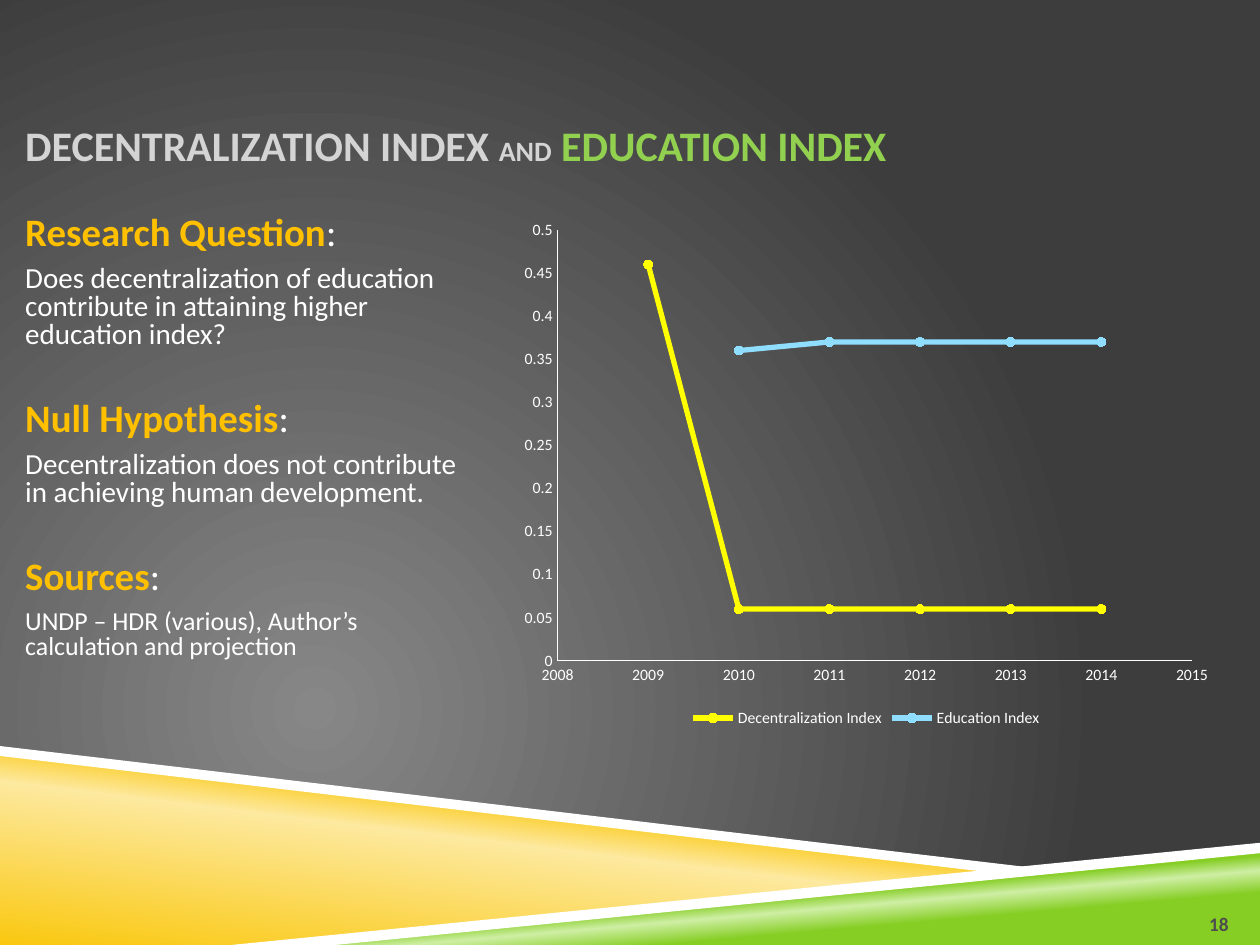
from lxml import etree
from pptx import Presentation
from pptx import util as u
from pptx.chart.data import XyChartData
from pptx.dml.color import RGBColor
from pptx.enum import chart as ch
from pptx.enum import text
from pptx.oxml.ns import qn

FONT = "Calibri"
WHITE, GOLD, YELLOW, GREEN, SKY = "FFFFFF", "FFC000", "FFFF00", "86CE24", "8FDEFF"
LIGHT_GREY, LIME = "D4D4D4", "92D050"

SECTIONS = [
    ("Research Question", 16.6,
     "Does decentralization of education contribute in attaining higher education index?"),
    ("Null Hypothesis", 16.6,
     "Decentralization does not contribute in achieving human development."),
    ("Sources", 14.8, "UNDP – HDR (various), Author’s calculation and projection"),
]
YEARS = [2014, 2013, 2012, 2011, 2010, 2009]
SERIES = [
    ("Decentralization Index", YELLOW, [0.06, 0.06, 0.06, 0.06, 0.06, 0.46]),
    ("Education Index", SKY, [0.37, 0.37, 0.37, 0.37, 0.36]),
]


def rgb(value):
    return RGBColor.from_string(value)


def set_gradient(fill, stops, angle=None, center=None):
    """Fill with (percent, colour) stops, linear by angle or circular around a rectangle."""
    fill.gradient()
    grad = fill._xPr.find(qn("a:gradFill"))
    for child in list(grad):
        grad.remove(child)
    gs_list = etree.SubElement(grad, qn("a:gsLst"))
    for percent, color in stops:
        gs = etree.SubElement(gs_list, qn("a:gs"), pos=str(percent * 1000))
        etree.SubElement(gs, qn("a:srgbClr"), val=color)
    if center:
        circle = etree.SubElement(grad, qn("a:path"), path="circle")
        etree.SubElement(circle, qn("a:fillToRect"),
                         {side: str(v * 1000) for side, v in zip("ltrb", center)})
    else:
        etree.SubElement(grad, qn("a:lin"), ang=str(angle * 60000), scaled="0")


def add_polygon(slide, points):
    start, *rest = [(u.Cm(x), u.Cm(y)) for x, y in points]
    builder = slide.shapes.build_freeform(*start)
    builder.add_line_segments(rest, close=True)
    sp = builder.convert_to_shape()
    sp.shadow.inherit = False
    sp.line.fill.background()
    return sp


def add_band(slide, points, stops, angle):
    set_gradient(add_polygon(slide, points).fill, stops, angle)


def add_stripe(slide, points):
    sp = add_polygon(slide, points)
    sp.fill.solid()
    sp.fill.fore_color.rgb = rgb(WHITE)


def add_text_frame(slide, box, anchor, bottom=0.13):
    tf = slide.shapes.add_textbox(*map(u.Cm, box)).text_frame
    tf.word_wrap = True
    tf.vertical_anchor = anchor
    tf.margin_left = tf.margin_right = 0
    tf.margin_top, tf.margin_bottom = u.Cm(0.13), u.Cm(bottom)
    return tf


def add_run(p, words, size, color, bold=False):
    r = p.add_run()
    r.text = words
    r.font.name, r.font.size, r.font.bold = FONT, u.Pt(size), bold
    r.font.color.rgb = rgb(color)


def add_title(slide):
    tf = add_text_frame(slide, (0.51, 2.03, 24.51, 1.52), text.MSO_ANCHOR.BOTTOM)
    p = tf.paragraphs[0]
    add_run(p, "DECENTRALIZATION INDEX ", 24, LIGHT_GREY, True)
    add_run(p, "AND", 16, LIGHT_GREY, True)
    add_run(p, " ", 24, LIGHT_GREY, True)
    add_run(p, "EDUCATION INDEX", 24, LIME, True)


def add_sections(slide):
    tf = add_text_frame(slide, (0.51, 4.24, 8.92, 10.52), text.MSO_ANCHOR.TOP)
    for i, (heading, size, body) in enumerate(SECTIONS):
        p = tf.add_paragraph() if i else tf.paragraphs[0]
        p.line_spacing = 0.8
        p.space_before = u.Pt(30.2 if i else 0)
        add_run(p, heading, 22.2, GOLD, True)
        add_run(p, ":", 22.2, WHITE)
        p = tf.add_paragraph()
        p.line_spacing = 0.8
        p.space_before = u.Pt(7)
        add_run(p, body, size, WHITE)


def set_font(font, size):
    font.name, font.size = FONT, u.Pt(size)
    font.color.rgb = rgb(WHITE)


def style_axis(axis, low, high, step):
    axis.minimum_scale, axis.maximum_scale, axis.major_unit = low, high, step
    axis.has_major_gridlines = False
    axis.major_tick_mark = axis.minor_tick_mark = ch.XL_TICK_MARK.NONE
    axis.format.line.color.rgb = rgb(WHITE)
    axis.format.line.width = u.Pt(0.75)
    set_font(axis.tick_labels.font, 9)


def style_series(series, color):
    series.smooth = True
    series.format.line.color.rgb = rgb(color)
    series.format.line.width = u.Pt(3)
    marker = series.marker
    marker.style, marker.size = ch.XL_MARKER_STYLE.CIRCLE, 5
    marker.format.fill.solid()
    marker.format.fill.fore_color.rgb = rgb(color)
    marker.format.line.color.rgb = rgb(color)


def add_index_chart(slide):
    data = XyChartData()
    for name, _, values in SERIES:
        series = data.add_series(name)
        for year, value in zip(YEARS, values):
            series.add_data_point(year, value)
    box = map(u.Cm, (10.29, 4.24, 14.35, 10.52))
    chart = slide.shapes.add_chart(ch.XL_CHART_TYPE.XY_SCATTER_SMOOTH, *box, data).chart
    chart.has_title = False
    set_font(chart.font, 10)
    chart.plots[0].vary_by_categories = False
    style_axis(chart.category_axis, 2008, 2015, 1)
    style_axis(chart.value_axis, 0, 0.5, 0.05)
    chart.has_legend = True
    chart.legend.position = ch.XL_LEGEND_POSITION.BOTTOM
    chart.legend.include_in_layout = False
    set_font(chart.legend.font, 9)
    for series, (_, color, _) in zip(chart.plots[0].series, SERIES):
        style_series(series, color)


def add_slide_number(slide):
    tf = add_text_frame(slide, (23.5, 17.83, 1.27, 1.02), text.MSO_ANCHOR.BOTTOM, bottom=0)
    p = tf.paragraphs[0]
    p.alignment = text.PP_ALIGN.RIGHT
    add_run(p, "18", 11, "4D4D4D", True)


def main():
    prs = Presentation()
    prs.slide_width, prs.slide_height = u.Cm(25.4), u.Cm(19.05)
    slide = prs.slides.add_slide(prs.slide_layouts[6])
    set_gradient(slide.background.fill, [(0, "878787"), (100, "3D3D3D")],
                 center=(50, 100, 100, 50))
    add_band(slide, [(5.03, 19.05), (25.4, 17.07), (25.4, 19.05)],
             [(28, GREEN), (40, "CFEFA4"), (48, GREEN)], 265)
    add_band(slide, [(0, 15.16), (20.12, 17.58), (5.08, 19.05), (0, 19.05)],
             [(0, "FAC810"), (52, "FDE99F"), (66, "FAC810")], 277)
    add_stripe(slide, [(0, 15.04), (0, 15.24), (20.07, 17.6), (21.13, 17.53)])
    add_stripe(slide, [(25.4, 16.99), (4.67, 19.05), (6.76, 19.05), (25.4, 17.2)])
    add_sections(slide)
    add_index_chart(slide)
    add_title(slide)
    add_slide_number(slide)
    prs.save("out.pptx")


if __name__ == "__main__":
    main()
